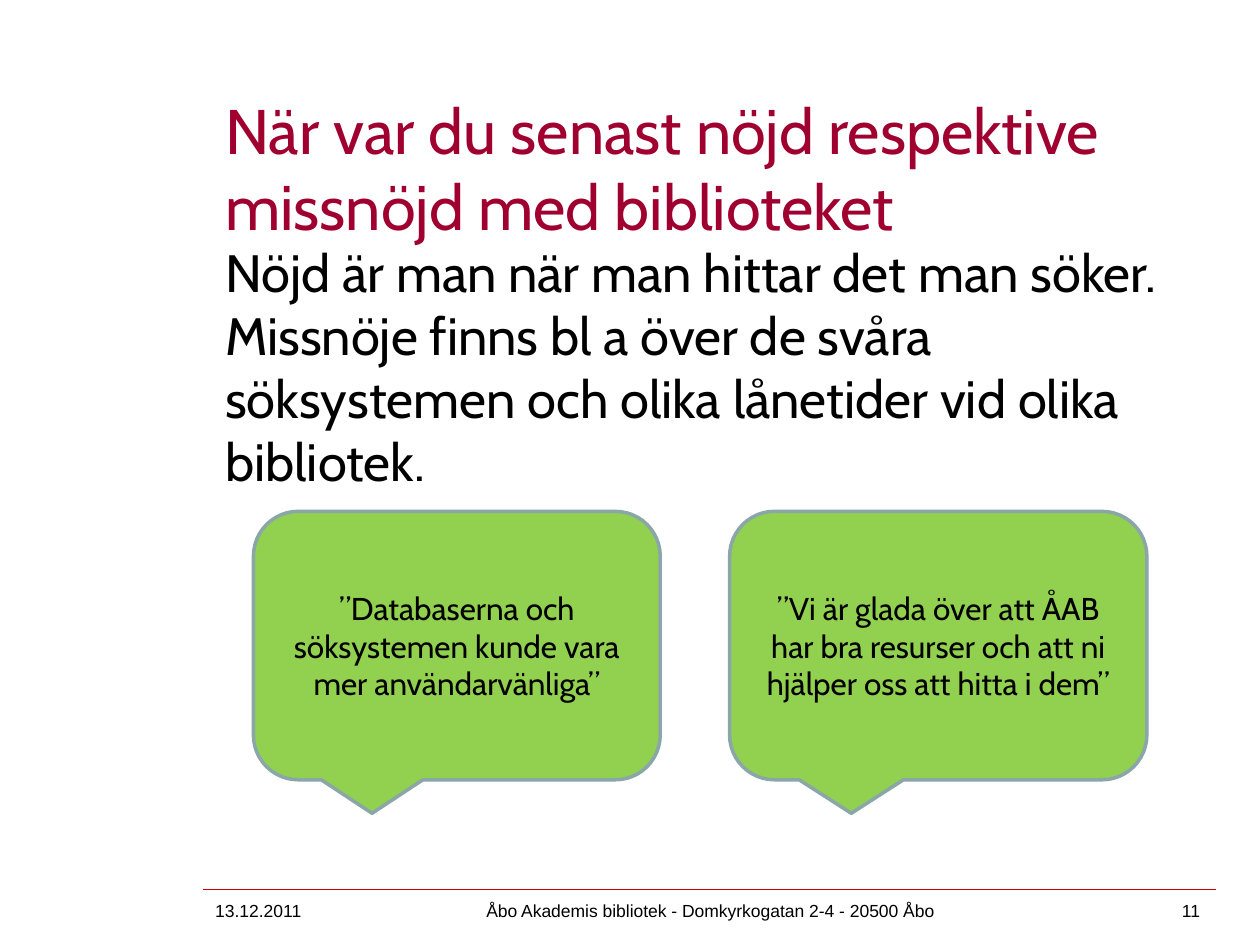
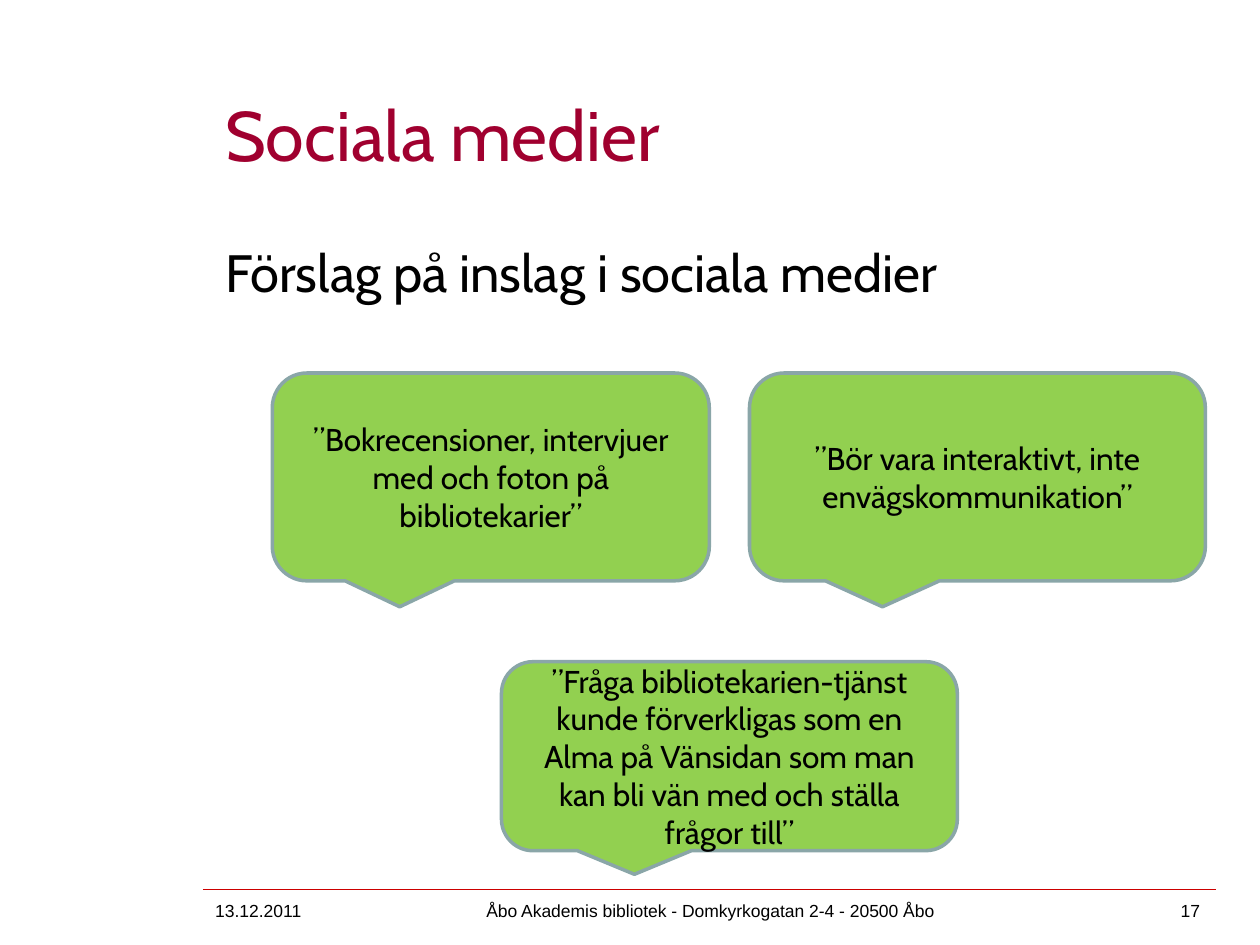
from lxml import etree
from pptx import Presentation
from pptx.dml.color import RGBColor
from pptx.enum.shapes import MSO_CONNECTOR, MSO_SHAPE
from pptx.enum.text import MSO_ANCHOR, PP_ALIGN
from pptx.oxml.ns import qn
from pptx.util import Cm, Pt

STRAIGHT = MSO_CONNECTOR.STRAIGHT
SPEECH_BUBBLE = MSO_SHAPE.ROUNDED_RECTANGULAR_CALLOUT
TOP, MIDDLE = MSO_ANCHOR.TOP, MSO_ANCHOR.MIDDLE
LEFT, CENTER, RIGHT = PP_ALIGN.LEFT, PP_ALIGN.CENTER, PP_ALIGN.RIGHT

CRIMSON = RGBColor(0xA0, 0x00, 0x2F)
RULE_RED = RGBColor(0xCC, 0x00, 0x00)
GREEN = RGBColor(0x92, 0xD0, 0x50)
GREY_BLUE = RGBColor(0x8A, 0xA6, 0xA8)
BLACK = RGBColor(0x00, 0x00, 0x00)
WHITE = RGBColor(0xFF, 0xFF, 0xFF)

CONTENT_LEFT, CONTENT_WIDTH = 4.29, 20.19
DATE = "13.12.2011"
ADDRESS = "Åbo Akademis bibliotek - Domkyrkogatan 2-4 - 20500 Åbo"


class Deck:
    """Holds the shared style and the slide being built; lengths are in cm."""

    text_font = "Cabin"
    footer_font = "Arial"

    def __init__(self):
        self.presentation = Presentation()
        self.presentation.slide_width = Cm(25.4)
        self.presentation.slide_height = Cm(19.05)
        self.slide = None

    def new_slide(self, number):
        blank = self.presentation.slide_layouts[6]
        self.slide = self.presentation.slides.add_slide(blank)
        background = self.slide.background.fill
        background.solid()
        background.fore_color.rgb = WHITE
        self.footer(number)

    def set_words(self, frame, words, size, color=BLACK, font=text_font,
                  align=LEFT, anchor=TOP):
        frame.word_wrap = True
        frame.vertical_anchor = anchor
        paragraph = frame.paragraphs[0]
        paragraph.alignment = align
        run = paragraph.add_run()
        run.text = words
        run.font.name = font
        run.font.size = Pt(size)
        run.font.color.rgb = color

    def text(self, left, top, width, height, words, size, **style):
        box = self.slide.shapes.add_textbox(Cm(left), Cm(top), Cm(width), Cm(height))
        self.set_words(box.text_frame, words, size, **style)

    def footer(self, number):
        rule = self.slide.shapes.add_connector(
            STRAIGHT, Cm(4.09), Cm(17.93), Cm(24.51), Cm(17.93))
        rule.line.color.rgb = RULE_RED
        rule.line.width = Pt(1)
        etree.SubElement(rule._element.spPr, qn("a:effectLst"))
        for left, width, words, align in (
            (4.09, 3.99, DATE, LEFT),
            (8.51, 11.61, ADDRESS, CENTER),
            (20.5, 3.94, str(number), RIGHT),
        ):
            self.text(left, 18.01, width, 1.04, words, 10,
                      font=self.footer_font, align=align)

    def title(self, words, size):
        self.text(CONTENT_LEFT, 1.73, CONTENT_WIDTH, 2.59, words, size, color=CRIMSON)

    def body(self, words):
        self.text(CONTENT_LEFT, 4.72, CONTENT_WIDTH, 12.19, words, 30)

    def quote(self, left, top, width, height, words):
        bubble = self.slide.shapes.add_shape(
            SPEECH_BUBBLE, Cm(left), Cm(top), Cm(width), Cm(height))
        bubble.shadow.inherit = False
        bubble.fill.solid()
        bubble.fill.fore_color.rgb = GREEN
        bubble.line.color.rgb = GREY_BLUE
        bubble.line.width = Pt(2)
        self.set_words(bubble.text_frame, f"”{words}”", 18,
                       align=CENTER, anchor=MIDDLE)


def satisfaction_slide(deck):
    deck.new_slide(11)
    deck.title("När var du senast nöjd respektive missnöjd med biblioteket", 36)
    deck.body("Nöjd är man när man hittar det man söker. Missnöje finns bl a över "
              "de svåra söksystemen och olika lånetider vid olika bibliotek.")
    deck.quote(5.11, 10.31, 8.2, 5.41,
               "Databaserna och söksystemen kunde vara mer användarvänliga")
    deck.quote(14.71, 10.31, 8.41, 5.41,
               "Vi är glada över att ÅAB har bra resurser och att ni hjälper oss "
               "att hitta i dem")


def social_media_slide(deck):
    deck.new_slide(17)
    deck.title("Sociala medier", 40)
    deck.body("Förslag på inslag i sociala medier")
    deck.quote(5.49, 7.52, 8.81, 4.19,
               "Bokrecensioner, intervjuer med och foton på bibliotekarier")
    deck.quote(15.11, 7.52, 9.19, 4.19,
               "Bör vara interaktivt, inte envägskommunikation")
    deck.quote(10.11, 13.34, 9.19, 3.81,
               "Fråga bibliotekarien-tjänst kunde förverkligas som en Alma på "
               "Vänsidan som man kan bli vän med och ställa frågor till")


def main():
    deck = Deck()
    satisfaction_slide(deck)
    social_media_slide(deck)
    deck.presentation.save("out.pptx")


if __name__ == "__main__":
    main()
